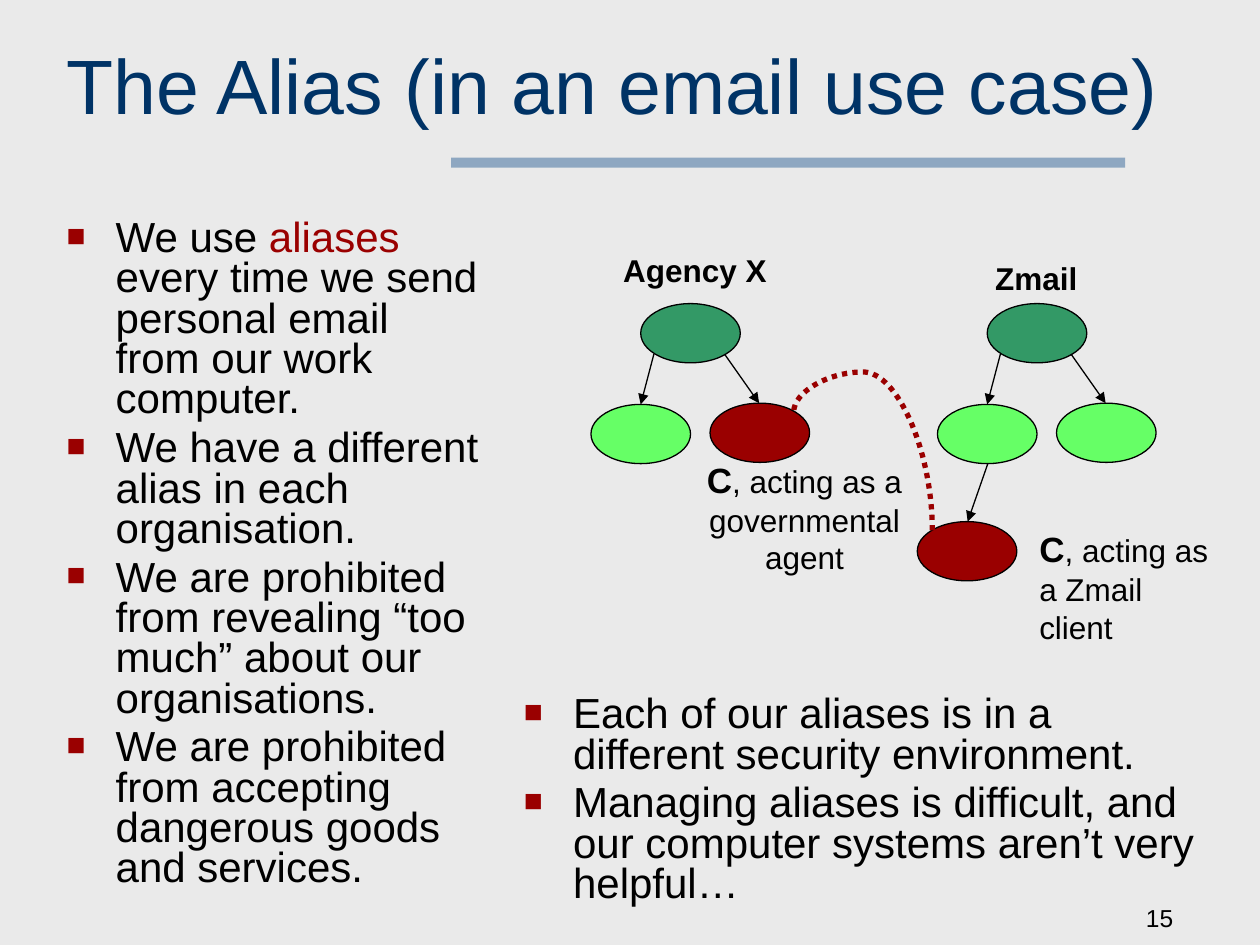
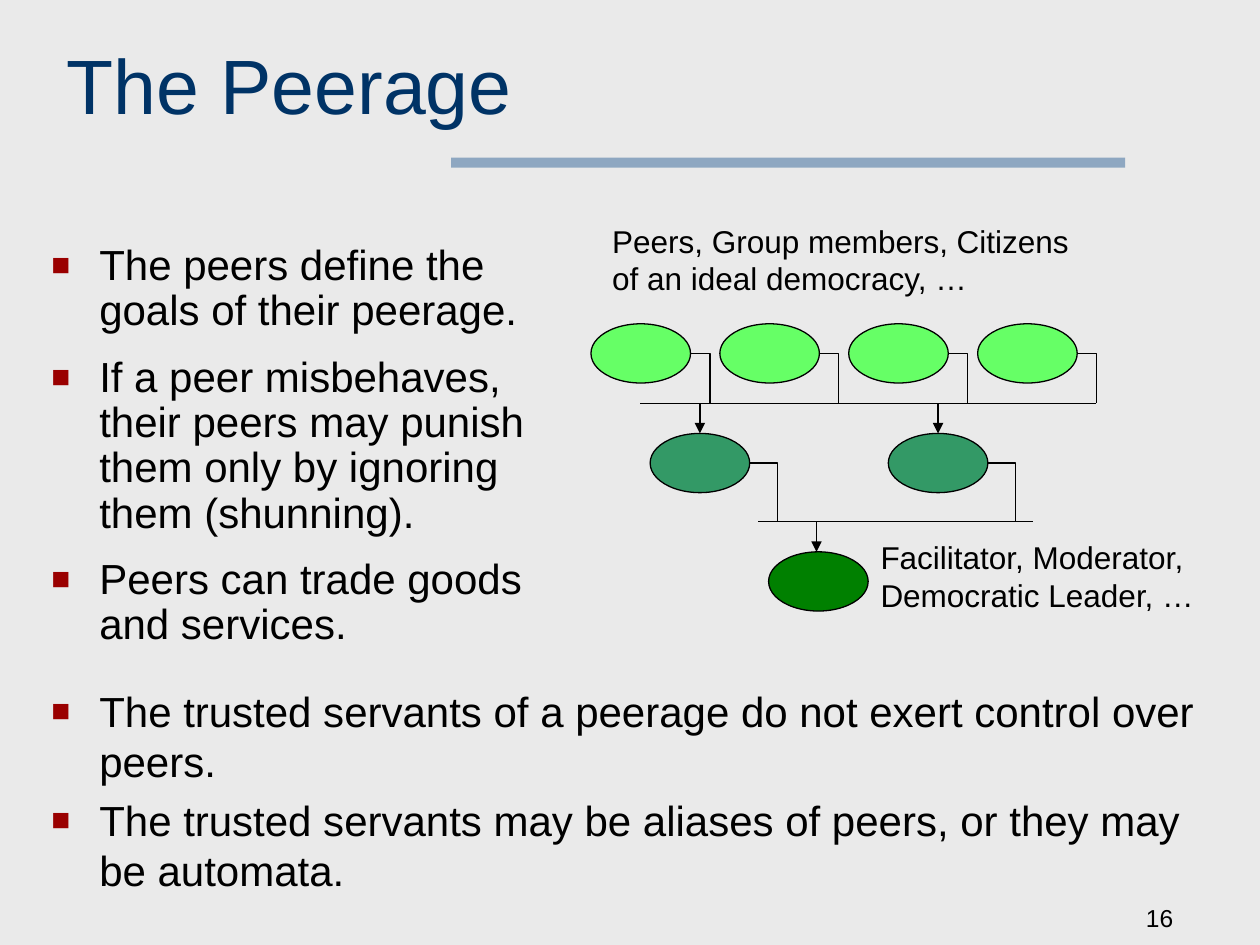
from dataclasses import dataclass

from lxml.etree import SubElement
from pptx import Presentation
from pptx.dml.color import RGBColor
from pptx.enum.dml import MSO_LINE
from pptx.enum.shapes import MSO_CONNECTOR, MSO_SHAPE
from pptx.enum.text import MSO_ANCHOR, PP_ALIGN
from pptx.oxml.ns import qn
from pptx.util import Inches, Pt


@dataclass(frozen=True)
class Theme:
    font: str = "Arial"
    background: str = "EAEAEA"
    title: str = "003366"
    bar: str = "336699"
    ink: str = "000000"
    red: str = "9A0000"
    dark_green: str = "008000"
    green: str = "339966"
    light_green: str = "66FF66"
    title_size: int = 44
    body_size: int = 24
    name_size: int = 20
    label_size: int = 18
    number_size: int = 14


THEME = Theme()
NODE_W, NODE_H = 0.79, 0.47
MID_X, MID_Y = NODE_W / 2, NODE_H / 2

# Run formats; "color" is a theme colour, the rest are font attributes
TITLE = {"size": Pt(THEME.title_size), "color": THEME.title}
BODY = {"size": Pt(THEME.body_size)}
ACCENT = BODY | {"color": THEME.red}
LABEL = {"size": Pt(THEME.label_size)}
HEADING = LABEL | {"bold": True}
NAME = {"size": Pt(THEME.name_size), "bold": True}
NUMBER = {"size": Pt(THEME.number_size)}


def add_text(slide, box, paragraphs, hang=0, anchor=MSO_ANCHOR.TOP, **layout):
    """Each paragraph is a list of (text, format) runs; hang makes bullets."""
    frame = slide.shapes.add_textbox(*map(Inches, box)).text_frame
    frame.word_wrap = True
    frame.vertical_anchor = anchor
    for index, runs in enumerate(paragraphs):
        paragraph = frame.paragraphs[0] if index == 0 else frame.add_paragraph()
        for attribute, value in layout.items():
            setattr(paragraph, attribute, value)
        if hang:
            properties = paragraph._p.get_or_add_pPr()
            properties.set("marL", str(Inches(hang)))
            properties.set("indent", str(-Inches(hang)))
            color = SubElement(properties, qn("a:buClr"))
            SubElement(color, qn("a:srgbClr"), val=THEME.red)
            SubElement(properties, qn("a:buSzPct"), val="75000")
            SubElement(properties, qn("a:buFont"), typeface=THEME.font)
            SubElement(properties, qn("a:buChar"), char="■")
        for text, style in runs:
            run = paragraph.add_run()
            run.text = text
            values = {"name": THEME.font, "color": THEME.ink} | style
            run.font.color.rgb = RGBColor.from_string(values.pop("color"))
            for attribute, value in values.items():
                setattr(run.font, attribute, value)


def add_line(slide, start, end, arrow=False, preset=None, adjust=None,
             color=THEME.ink, width=0.75):
    """A preset runs from start at the lower right, up and over to end."""
    (x1, y1), (x2, y2) = start, end
    if preset:
        # The frame is turned a quarter, so its sides swap about the centre
        across, down = (x1 + x2) / 2, (y1 + y2) / 2
        half_w, half_h = (y1 - y2) / 2, (x1 - x2) / 2
        x1, y1 = across - half_w, down - half_h
        x2, y2 = across + half_w, down + half_h
    line = slide.shapes.add_connector(MSO_CONNECTOR.STRAIGHT, *map(Inches, (x1, y1, x2, y2)))
    line.line.color.rgb = RGBColor.from_string(color)
    line.line.width = Pt(width)
    properties = line._element.spPr
    if preset:
        properties.xfrm.set("rot", "5400000")
        properties.xfrm.set("flipH", "1")
        geometry = properties.find(qn("a:prstGeom"))
        geometry.set("prst", preset)
        if adjust:
            SubElement(geometry.find(qn("a:avLst")), qn("a:gd"),
                       name="adj1", fmla=f"val {adjust}")
    if arrow:
        SubElement(line.line._get_or_add_ln(), qn("a:tailEnd"), type="triangle")
    SubElement(properties, qn("a:effectLst"))
    return line


prs = Presentation()
prs.slide_width, prs.slide_height = Inches(10), Inches(7.5)

# Node positions: two organisation trees, then the levels of the peerage
alias_nodes = [(7.28, 4.14, THEME.red)]
for left, right_child in ((4.69, THEME.red), (7.44, THEME.light_green)):
    alias_nodes += [(left + MID_X, 2.41, THEME.green),
                    (left, 3.21, THEME.light_green),
                    (left + 0.945, 3.2, right_child)]
peers = [4.69 + 1.023 * i for i in range(4)]
servants = [5.16, 7.05]
peerage_nodes = [(left, 2.57, THEME.light_green) for left in peers]
peerage_nodes += [(left, 3.44, THEME.green) for left in servants]
peerage_nodes += [(6.1, 4.38, THEME.dark_green)]

# Parts that both slides share
pages = []
for number, title, nodes in (
    (15, "The Alias (in an email use case)", alias_nodes),
    (16, "The Peerage", peerage_nodes),
):
    slide = prs.slides.add_slide(prs.slide_layouts[6])
    slide.background.fill.solid()
    slide.background.fill.fore_color.rgb = RGBColor.from_string(THEME.background)

    bar = slide.shapes.add_shape(MSO_SHAPE.RECTANGLE, *map(Inches, (3.58, 1.25, 5.35, 0.08)))
    bar.shadow.inherit = False
    bar.line.fill.background()
    bar.fill.solid()
    bar.fill.fore_color.rgb = RGBColor.from_string(THEME.bar)
    bar_color = bar._element.spPr.find(qn("a:solidFill"))[0]
    SubElement(bar_color, qn("a:alpha"), val="50000")

    add_text(slide, (7.33, 7.14, 2.08, 0.31), [[(str(number), NUMBER)]],
             anchor=MSO_ANCHOR.BOTTOM, alignment=PP_ALIGN.RIGHT)
    add_text(slide, (0.43, 0.25, 9.02, 1.19), [[(title, TITLE)]])

    for left, top, color in nodes:
        node = slide.shapes.add_shape(MSO_SHAPE.OVAL, *map(Inches, (left, top, NODE_W, NODE_H)))
        node.shadow.inherit = False
        node.fill.solid()
        node.fill.fore_color.rgb = RGBColor.from_string(color)
        node.line.color.rgb = RGBColor.from_string(THEME.ink)
        node.line.width = Pt(0.75)
    pages.append(slide)
alias, peerage = pages

# The Alias: bullets
tight = {"hang": 0.39, "line_spacing": 0.8, "space_before": Pt(4.8)}
add_text(alias, (0.43, 1.7, 3.47, 5.51), [
    [("We use ", BODY), ("aliases ", ACCENT),
     ("every time we send personal email from our work computer.", BODY)],
    [("We have a different alias in each organisation.", BODY)],
    [("We are prohibited from revealing “too much” about our organisations.", BODY)],
    [("We are prohibited from accepting dangerous goods and services.", BODY)],
], **tight)
add_text(alias, (4.06, 5.48, 5.59, 1.8), [
    [("Each of our aliases is in a different security environment.", BODY)],
    [("Managing aliases is difficult, and our computer systems aren’t very helpful…", BODY)],
], **tight)

# The Alias: labels
for box, runs, alignment in (
    ((4.69, 1.94, 1.65, 0.4), [("Agency X", HEADING)], PP_ALIGN.CENTER),
    ((7.44, 2.01, 1.57, 0.4), [("Zmail", HEADING)], PP_ALIGN.CENTER),
    ((5.4, 3.59, 1.97, 1.03),
     [("C", NAME), (", acting as a governmental agent", LABEL)], PP_ALIGN.CENTER),
    ((8.15, 4.14, 1.57, 1.04),
     [("C", NAME), (", acting as a Zmail client", LABEL)], PP_ALIGN.LEFT),
):
    add_text(alias, box, [runs], alignment=alignment)

# The Alias: tree arrows and the dotted link between the two aliases
for left in (4.69, 7.44):
    add_line(alias, (left + 0.5, 2.81), (left + MID_X, 3.21), arrow=True)
    add_line(alias, (left + 1.06, 2.81), (left + 1.335, 3.2), arrow=True)
add_line(alias, (7.84, 3.68), (7.68, 4.14), arrow=True)
link = add_line(alias, (7.4, 4.21), (6.3, 3.27), preset="curvedConnector3",
                adjust=133800, color=THEME.red, width=3)
link.line.dash_style = MSO_LINE.ROUND_DOT

# The Peerage: bullets
add_text(peerage, (0.31, 1.89, 4.38, 3.66), [
    [("The peers define the goals of their peerage.", BODY)],
    [("If a peer misbehaves, their peers may punish them only by ignoring them (shunning).", BODY)],
    [("Peers can trade goods and services.", BODY)],
], hang=0.38, line_spacing=0.9, space_before=Pt(12))
add_text(peerage, (0.31, 5.39, 9.3, 1.8), [
    [("The trusted servants of a peerage do not exert control over peers.", BODY)],
    [("The trusted servants may be aliases of peers, or they may be automata.", BODY)],
], hang=0.38, space_before=Pt(4.8))

# The Peerage: labels
for box, text in (
    ((4.76, 1.71, 3.86, 0.7), "Peers, Group members, Citizens of an ideal democracy, …"),
    ((6.89, 4.22, 2.76, 0.7), "Facilitator, Moderator, Democratic Leader, …"),
):
    add_text(peerage, box, [[(text, LABEL)]])

# The Peerage: each level feeds a rail, and arrows lead from it to the next level
for lefts, node_top, rail, rail_ends, drop, arrows, next_top in (
    (peers, 2.57, 3.2, (5.08, 8.7), 0.155, [left + MID_X for left in servants], 3.44),
    (servants, 3.44, 4.14, (6.02, 8.2), 0.22, [6.48], 4.38),
):
    add_line(peerage, (rail_ends[0], rail), (rail_ends[1], rail))
    for left in lefts:
        edge = left + NODE_W
        add_line(peerage, (edge + drop, rail), (edge, node_top + MID_Y), preset="bentConnector2")
    for x in arrows:
        add_line(peerage, (x, rail), (x, next_top), arrow=True)

prs.save("out.pptx")
